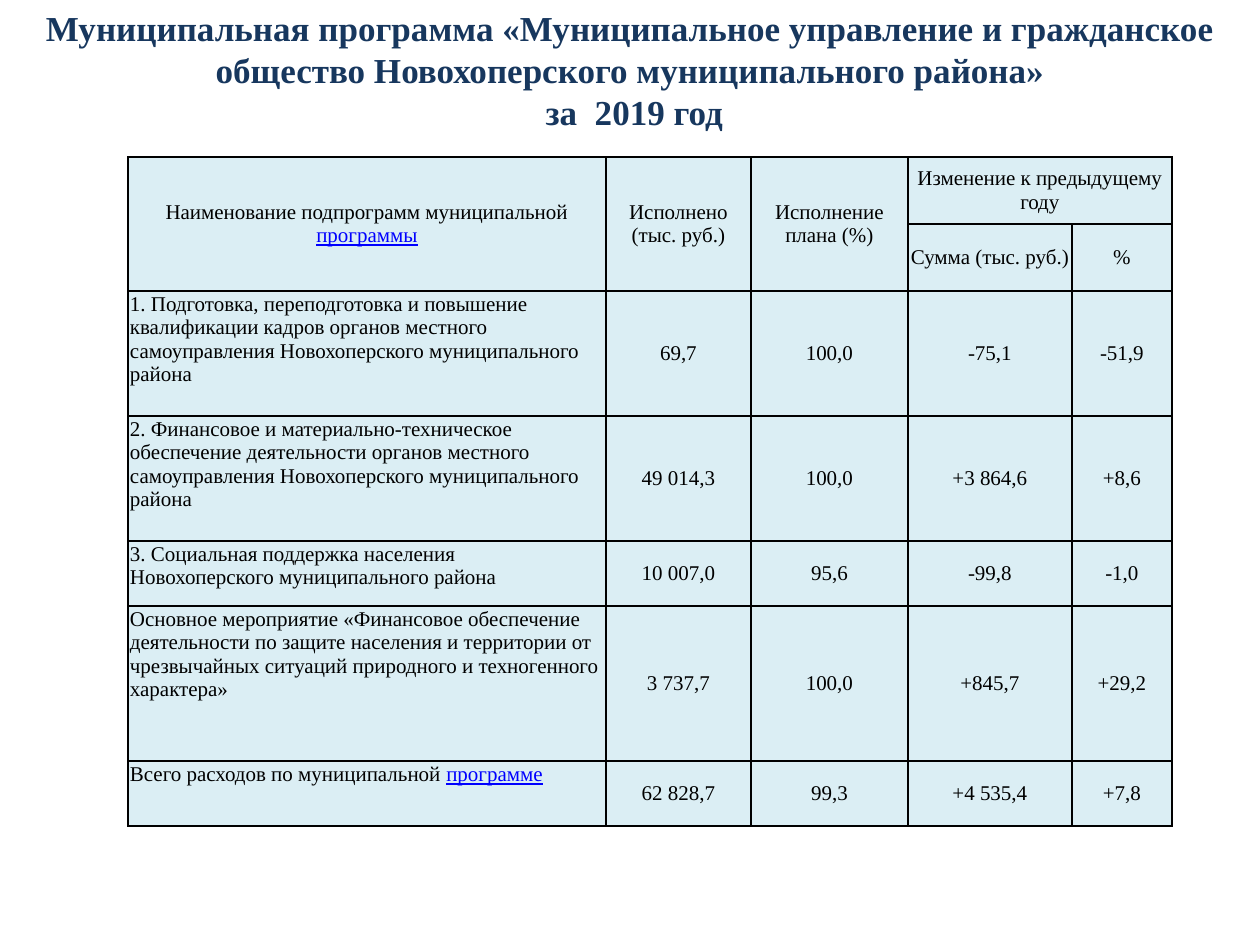
from dataclasses import dataclass

from lxml.etree import SubElement
from pptx import Presentation
from pptx.dml.color import RGBColor as RGB
from pptx.enum.text import MSO_ANCHOR as ANCHOR, MSO_AUTO_SIZE as AUTO, PP_ALIGN as ALIGN
from pptx.oxml.ns import qn
from pptx.util import Emu, Pt


@dataclass(frozen=True)
class Theme:
    font: str = "Times New Roman"
    title: RGB = RGB(0x17, 0x37, 0x5E)
    text: RGB = RGB(0, 0, 0)
    link: RGB = RGB(0, 0, 0xFF)
    cell: RGB = RGB(0xDB, 0xEE, 0xF4)
    border: RGB = RGB(0, 0, 0)
    title_size: Pt = Pt(20)
    cell_size: Pt = Pt(12)
    border_width: Pt = Pt(1)


T = Theme()
PX = 914400 / 126


def px(n):
    return Emu(round(n * PX))


def add_run(p, text, size, color):
    r = p.add_run()
    r.text = text
    r.font.name, r.font.size, r.font.color.rgb = T.font, size, color
    return r


TITLE = [
    "Муниципальная программа «Муниципальное управление и гражданское общество "
    "Новохоперского муниципального района»",
    " за  2019 год",
]
COLS = [478, 145, 157, 164, 100]
ROWS = [67, 67, 125, 125, 65, 155, 65]
HEADER_ROWS = 2
MERGES = [((0, 0), (1, 0)), ((0, 1), (1, 1)), ((0, 2), (1, 2)), ((0, 3), (0, 4))]

# The part of a cell after "|" is styled as a link
CELLS = [
    ["Наименование подпрограмм муниципальной |программы", "Исполнено (тыс. руб.)",
     "Исполнение плана (%)", "Изменение к предыдущему году", ""],
    ["", "", "", "Сумма (тыс. руб.)", "%"],
    ["1. Подготовка, переподготовка и повышение квалификации кадров органов местного "
     "самоуправления Новохоперского муниципального района",
     "69,7", "100,0", "-75,1", "-51,9"],
    ["2. Финансовое и материально-техническое обеспечение деятельности органов местного "
     "самоуправления Новохоперского муниципального района",
     "49 014,3", "100,0", "+3 864,6", "+8,6"],
    ["3. Социальная поддержка населения Новохоперского муниципального района",
     "10 007,0", "95,6", "-99,8", "-1,0"],
    ["Основное мероприятие «Финансовое обеспечение деятельности по защите населения и "
     "территории от чрезвычайных ситуаций природного и техногенного характера»",
     "3 737,7", "100,0", "+845,7", "+29,2"],
    ["Всего расходов по муниципальной |программе",
     "62 828,7", "99,3", "+4 535,4", "+7,8"],
]

prs = Presentation()
prs.slide_width, prs.slide_height = px(1260), px(945)
s = prs.slides.add_slide(prs.slide_layouts[5])

# Title
title = s.shapes.title
title.left, title.top, title.width, title.height = px(0), px(0), px(1260), px(140)
tf = title.text_frame
tf.word_wrap, tf.auto_size = True, AUTO.SHAPE_TO_FIT_TEXT
tf.vertical_anchor = ANCHOR.TOP
for i, line in enumerate(TITLE):
    p = tf.add_paragraph() if i else tf.paragraphs[0]
    p.alignment = ALIGN.CENTER
    add_run(p, line, T.title_size, T.title).font.bold = True

# Table
table = s.shapes.add_table(
    len(ROWS), len(COLS), px(128), px(157), px(sum(COLS)), px(sum(ROWS))
).table
table.first_row = table.horz_banding = False
for col, width in zip(table.columns, COLS):
    col.width = px(width)
for row, height in zip(table.rows, ROWS):
    row.height = px(height)
for (top, left), (bottom, right) in MERGES:
    table.cell(top, left).merge(table.cell(bottom, right))

for i, texts in enumerate(CELLS):
    for j, text in enumerate(texts):
        cell = table.cell(i, j)
        is_name = j == 0 and i >= HEADER_ROWS
        cell.margin_left = cell.margin_right = px(2)
        cell.margin_top = cell.margin_bottom = px(2)
        cell.vertical_anchor = ANCHOR.TOP if is_name else ANCHOR.MIDDLE

        tcPr = cell._tc.get_or_add_tcPr()
        for side in ("a:lnL", "a:lnR", "a:lnT", "a:lnB"):
            ln = SubElement(tcPr, qn(side), w=str(T.border_width))
            SubElement(SubElement(ln, qn("a:solidFill")), qn("a:srgbClr"), val=str(T.border))
        cell.fill.solid()
        cell.fill.fore_color.rgb = T.cell

        if not text:
            continue
        p = cell.text_frame.paragraphs[0]
        p.alignment = ALIGN.LEFT if is_name else ALIGN.CENTER
        plain, _, link = text.partition("|")
        add_run(p, plain, T.cell_size, T.text)
        if link:
            add_run(p, link, T.cell_size, T.link).font.underline = True

prs.save("out.pptx")
